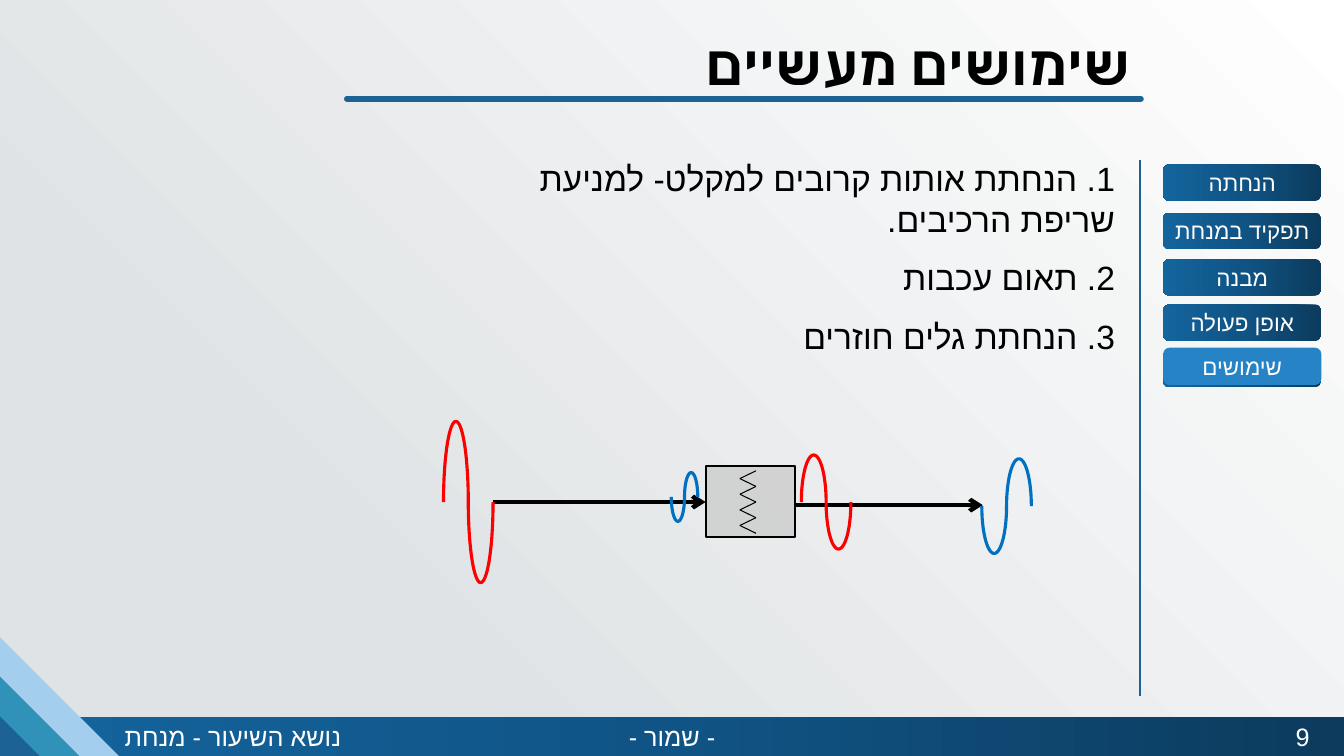
from collections import namedtuple
from copy import deepcopy
from dataclasses import dataclass
from math import cos, pi, sin

from lxml import etree
from pptx import Presentation
from pptx import util as u
from pptx.dml.color import RGBColor
from pptx.enum import shapes, text
from pptx.oxml.ns import qn

Box = namedtuple("Box", "left top width height")
Preset = shapes.MSO_SHAPE
Align = text.PP_ALIGN


@dataclass(frozen=True)
class Theme:
    backdrop: tuple = ((0, "FFFFFF"), (0.75, "DFE3E5"))
    bar: tuple = ((0, "0C3B5D"), (0.5, "105485"), (1, "14649D"))
    corner: tuple = (("A3CEED", 100), ("1482AC", 80), ("1D6295", 100))
    rule: str = "1D6295"
    active: str = "2683C6"
    ink: str = "000000"
    light: str = "FFFFFF"
    device: str = "C0C0C0"
    strong_wave: str = "FF0000"
    weak_wave: str = "0070C0"
    main_font: str = "Calibri"
    footer_font: str = "Lato"
    hebrew_font: str = "Arial"
    title_size: int = 40
    body_size: int = 24
    footer_size: int = 18
    nav_size: int = 16


THEME = Theme()


def apply(target, **values):
    for name, value in values.items():
        setattr(target, name, value)


def points(*lengths):
    return [u.Pt(length) for length in lengths]


def child(parent, tag, **attributes):
    return etree.SubElement(parent, qn(tag), attributes)


def paint(fill, color, alpha=100):
    fill.solid()
    fill.fore_color.rgb = RGBColor.from_string(color)
    return alpha


def paint_gradient(fill, element, stops, angle):
    fill.gradient()
    fill.gradient_angle = -angle % 360
    stop_list = element.xpath(".//a:gsLst")[0]
    while len(stop_list) < len(stops):
        stop_list.append(deepcopy(stop_list[0]))
    for stop, (position, color) in zip(fill.gradient_stops, stops):
        stop.color.rgb = RGBColor.from_string(color)
        stop.position = position


def add_block(slide, preset, box, color=None, alpha=100):
    """A borderless shape; the bar gradient is used when no colour is given."""
    block = slide.shapes.add_shape(preset, *points(*box))
    block.shadow.inherit = False
    block.line.fill.background()
    if color is None:
        paint_gradient(block.fill, block.element, THEME.bar, 180)
        return block
    paint(block.fill, color)
    if alpha < 100:
        tint = block.element.spPr.xpath("./a:solidFill/a:srgbClr")[0]
        child(tint, "a:alpha", val=str(alpha * 1000))
    return block


def style_line(line, color, width):
    paint(line.fill, color)
    line.width = u.Pt(width)


def add_line(slide, start, end, color, width, arrow=False, cap="flat"):
    line = slide.shapes.add_connector(
        shapes.MSO_CONNECTOR.STRAIGHT, *points(*start, *end))
    style_line(line.line, color, width)
    child(line.element.spPr, "a:effectLst")
    outline = line.line._get_or_add_ln()
    outline.set("cap", cap)
    if arrow:
        child(outline, "a:tailEnd", type="arrow")


def write(frame, lines, align, size, color, font=THEME.main_font,
          complex_font=THEME.hebrew_font, bold=False):
    """Right-to-left paragraphs in one format."""
    frame.word_wrap = True
    for index, words in enumerate(lines):
        paragraph = frame.paragraphs[0] if index == 0 else frame.add_paragraph()
        paragraph.alignment = align
        paragraph._p.get_or_add_pPr().set("rtl", "1")
        if index:
            paragraph.space_before = u.Pt(13)
        run = paragraph.add_run()
        run.text = words
        apply(run.font, name=font, size=u.Pt(size), bold=bold)
        run.font.color.rgb = RGBColor.from_string(color)
        child(run._r.get_or_add_rPr(), "a:cs", typeface=complex_font)


def add_text(slide, box, lines, align, size, color, **options):
    frame = slide.shapes.add_textbox(*points(*box)).text_frame
    write(frame, lines, align, size, color, **options)


def add_footer(slide, box):
    add_block(slide, Preset.RECTANGLE, box)
    # Corner triangles, largest at the back
    bottom = box.top + box.height
    for step, (color, alpha) in zip((3, 2, 1), THEME.corner):
        side = step * 28.3
        corner = Box(box.left, bottom - side, side, side)
        add_block(slide, Preset.RIGHT_TRIANGLE, corner, color, alpha)
    # Labels
    for offset, width, words, align in (
            (82, 263, "נושא השיעור - מנחת", Align.LEFT),
            (420, 120, "- שמור -", Align.CENTER),
            (901, 59, "9", Align.CENTER)):
        add_text(slide, Box(box.left + offset, box.top, width, 29), [words], align,
                 THEME.footer_size, THEME.light, font=THEME.footer_font)


def add_nav(slide, box):
    add_line(slide, (box.left, box.top), (box.left, box.top + box.height),
             THEME.rule, 1.5)
    # Buttons: offset, height, colour (None for the gradient), label
    for offset, height, color, label in (
            (2.9, 26, None, "הנחתה"),
            (37.4, 26, None, "תפקיד במנחת"),
            (70.6, 26, None, "מבנה"),
            (103, 26, None, "אופן פעולה"),
            (136, 26, None, None),
            (133.9, 26.6, THEME.active, "שימושים")):
        place = Box(box.left + 16.6, box.top + offset, 113, height)
        button = add_block(slide, Preset.ROUNDED_RECTANGLE, place, color)
        if label:
            button.text_frame.vertical_anchor = text.MSO_ANCHOR.MIDDLE
            write(button.text_frame, [label], Align.CENTER,
                  THEME.nav_size, THEME.light)


def add_title(slide, box):
    underline = box.top + 53.3
    add_line(slide, (box.left + box.width, underline), (box.left + 80.7, underline),
             THEME.rule, 4, cap="rnd")
    add_text(slide, box, ["שימושים מעשיים"], Align.RIGHT, THEME.title_size,
             THEME.ink, complex_font=THEME.main_font, bold=True)


def add_uses(slide, box):
    uses = ["1. הנחתת אותות קרובים למקלט- למניעת שריפת הרכיבים.",
            "2. תאום עכבות",
            "3. הנחתת גלים חוזרים"]
    add_text(slide, box, uses, Align.RIGHT, THEME.body_size, THEME.ink)


def add_wave(slide, left, middle, width, height, rise, color):
    """Two half ellipses side by side; rise is 1 to start upwards, -1 downwards."""
    steps, radius = 34, width / 4
    curve = []
    for half, direction in enumerate((-rise, rise)):
        center = left + radius * (1 + 2 * half)
        for step in range(steps + 1):
            turn = pi * step / steps
            curve.append(points(center - radius * cos(turn),
                                middle + direction * height * sin(turn)))
    builder = slide.shapes.build_freeform(*curve[0])
    builder.add_line_segments(curve[1:], close=False)
    wave = builder.convert_to_shape()
    wave.shadow.inherit = False
    wave.fill.background()
    style_line(wave.line, color, 2.25)


def add_attenuator(slide, box):
    x, y = box.left, box.top
    device = add_block(slide, Preset.RECTANGLE, Box(x + 187.2, y + 31.7, 64.1, 51.1),
                       THEME.device, 57)
    style_line(device.line, THEME.ink, 1.5)
    # Signal arrows
    for start, end, level in ((35.3, 187.2, 57.6), (251.3, 385.2, 59.8)):
        add_line(slide, (x + start, y + level), (x + end, y + level),
                 THEME.ink, 3, arrow=True)
    # Resistor zigzag
    bends = [(x + (211.7 if i % 2 else 223.2), y + 35.3 + 5.58 * i) for i in range(9)]
    for start, end in zip(bends, bends[1:]):
        add_line(slide, start, end, THEME.ink, 0.75)
    # Waves before and after the device
    for left, middle, width, height, rise, color in (
            (0, 57.6, 35.4, 57.6, 1, THEME.strong_wave),
            (255.6, 57.6, 35.4, 33.6, 1, THEME.strong_wave),
            (384.5, 60.5, 35.4, 33.8, -1, THEME.weak_wave),
            (162.7, 54, 18.9, 17.4, -1, THEME.weak_wave)):
        add_wave(slide, x + left, y + middle, width, height, rise, color)


def main():
    deck = Presentation()
    apply(deck, slide_width=u.Pt(960), slide_height=u.Pt(540))
    slide = deck.slides.add_slide(deck.slide_layouts[6])
    paint_gradient(slide.background.fill, slide.element, THEME.backdrop, 135)
    add_footer(slide, Box(0, 511.9, 960, 28.1))
    add_nav(slide, Box(814.3, 114.5, 145.7, 383))
    add_title(slide, Box(167, 17.3, 648, 90))
    add_uses(slide, Box(316.8, 109.4, 486.7, 152.6))
    add_attenuator(slide, Box(316.8, 301, 420.5, 115.2))
    deck.save("out.pptx")


if __name__ == "__main__":
    main()
